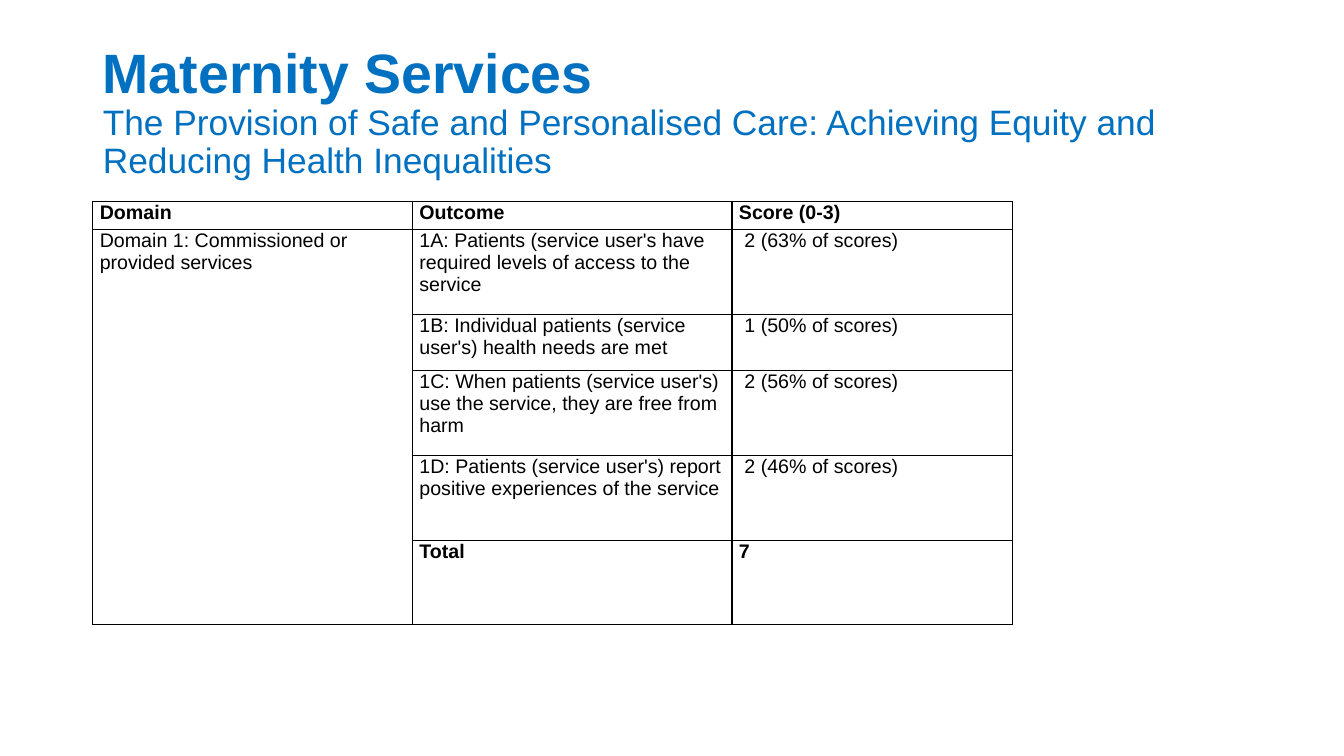
"""Build the maternity services scoring slide."""
from lxml.etree import SubElement
from pptx import Presentation
from pptx.dml.color import RGBColor
from pptx.enum.text import MSO_ANCHOR, MSO_AUTO_SIZE, PP_ALIGN
from pptx.oxml.ns import qn
from pptx.util import Inches, Pt

TITLE = "Maternity Services"
SUBTITLE = ("The Provision of Safe and Personalised Care: "
            "Achieving Equity and Reducing Health Inequalities")
ROWS = [
    ("Domain", "Outcome", "Score (0-3)"),
    ("Domain 1: Commissioned or provided services",
     "1A: Patients (service user's have required levels of access to the service",
     " 2 (63% of scores)"),
    ("", "1B: Individual patients (service user's) health needs are met",
     " 1 (50% of scores)"),
    ("", "1C: When patients (service user's) use the service, they are free from harm",
     " 2 (56% of scores)"),
    ("", "1D: Patients (service user's) report positive experiences of the service",
     " 2 (46% of scores)"),
    ("", "Total", "7"),
]
COL_WIDTHS = (3.17, 3.17, 2.78)
LINE_HEIGHT = 0.28
ROW_LINES = (1, 3, 2, 3, 3, 3)
BOLD_ROWS = (0, len(ROWS) - 1)
LEFT = 0.92
FONT = "Arial"
BLUE = RGBColor(0x00, 0x70, 0xC0)
BLACK = RGBColor(0x00, 0x00, 0x00)


def add_run(p, text, size, color, bold):
    """Add one formatted run to a paragraph."""
    r = p.add_run()
    r.text = text
    r.font.name = FONT
    r.font.size = Pt(size)
    r.font.bold = bold
    r.font.color.rgb = color


def add_borders(cell):
    """Draw a thin black line on every side of a cell."""
    tc_pr = cell._tc.get_or_add_tcPr()
    for i, side in enumerate(("a:lnL", "a:lnR", "a:lnT", "a:lnB")):
        ln = tc_pr.makeelement(qn(side), {"w": str(Pt(1))})
        fill = SubElement(ln, qn("a:solidFill"))
        SubElement(fill, qn("a:srgbClr"), val=str(BLACK))
        tc_pr.insert(i, ln)


def add_title(slide):
    """Fill the title placeholder with the heading and its subtitle."""
    sp = slide.shapes.title
    sp.left, sp.top = Inches(LEFT), Inches(0.4)
    sp.width, sp.height = Inches(11.5), Inches(1.45)
    tf = sp.text_frame
    tf.word_wrap = True
    tf.auto_size = MSO_AUTO_SIZE.NONE
    tf.vertical_anchor = MSO_ANCHOR.MIDDLE
    p = tf.paragraphs[0]
    p.alignment = PP_ALIGN.LEFT
    p.line_spacing = 0.9
    add_run(p, TITLE, 39.6, BLUE, True)
    p.add_line_break()
    add_run(p, SUBTITLE, 25.2, BLUE, False)


def add_scores(slide):
    """Add the table of outcomes and scores."""
    heights = [LINE_HEIGHT * n for n in ROW_LINES]
    table = slide.shapes.add_table(
        len(ROWS), len(COL_WIDTHS), Inches(LEFT), Inches(2),
        Inches(sum(COL_WIDTHS)), Inches(sum(heights))).table
    table.first_row = table.horz_banding = False
    for column, width in zip(table.columns, COL_WIDTHS):
        column.width = Inches(width)
    for i, (row, height) in enumerate(zip(ROWS, heights)):
        table.rows[i].height = Inches(height)
        for j, text in enumerate(row):
            cell = table.cell(i, j)
            cell.margin_left = cell.margin_right = Inches(0.07)
            cell.margin_top = cell.margin_bottom = 0
            cell.fill.background()
            add_borders(cell)
            if text:
                add_run(cell.text_frame.paragraphs[0], text, 14, BLACK, i in BOLD_ROWS)
    table.cell(1, 0).merge(table.cell(len(ROWS) - 1, 0))


def main():
    """Create the presentation and save it."""
    prs = Presentation()
    prs.slide_width, prs.slide_height = Inches(13.33), Inches(7.5)
    slide = prs.slides.add_slide(prs.slide_layouts[5])
    add_title(slide)
    add_scores(slide)
    prs.save("out.pptx")


if __name__ == "__main__":
    main()
